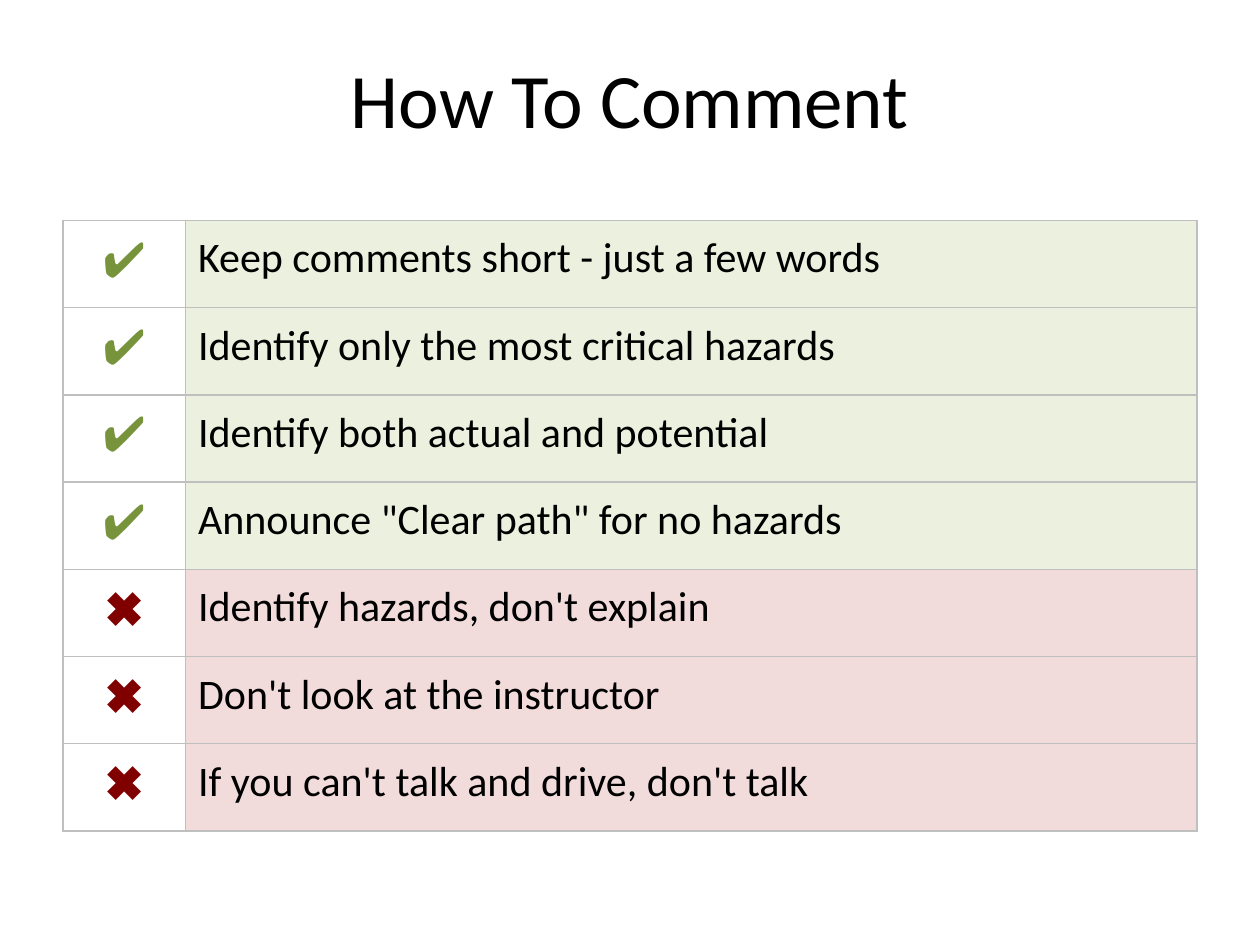
from lxml import etree
from pptx import Presentation
from pptx.dml.color import RGBColor
from pptx.enum.text import MSO_ANCHOR, PP_ALIGN
from pptx.oxml.ns import qn
from pptx.util import Pt

CENTER, LEFT = PP_ALIGN.CENTER, PP_ALIGN.LEFT
MIDDLE, TOP = MSO_ANCHOR.MIDDLE, MSO_ANCHOR.TOP
TITLE_ONLY = 5

COLORS = {
    "text": "000000",
    "border": "BFBFBF",
    "do_mark": "77933C",
    "do_fill": "EBF1DE",
    "dont_mark": "800000",
    "dont_fill": "F2DCDB",
}
MARKS = {"do": "✔", "dont": "✖"}
ADVICE = [
    ("do", "Keep comments short - just a few words"),
    ("do", "Identify only the most critical hazards"),
    ("do", "Identify both actual and potential"),
    ("do", 'Announce "Clear path" for no hazards'),
    ("dont", "Identify hazards, don't explain"),
    ("dont", "Don't look at the instructor"),
    ("dont", "If you can't talk and drive, don't talk"),
]
MARK_WIDTH = 70


def color(name):
    return RGBColor.from_string(COLORS[name])


def write(frame, text, size, font, color_name, align):
    paragraph = frame.paragraphs[0]
    paragraph.alignment = align
    run = paragraph.add_run()
    run.text = text
    run.font.size = Pt(size)
    run.font.name = font
    run.font.color.rgb = color(color_name)


def add_borders(cell):
    """Line all four sides; must run before the cell gets its fill."""
    properties = cell._tc.get_or_add_tcPr()
    for side in ("a:lnL", "a:lnR", "a:lnT", "a:lnB"):
        line = etree.SubElement(properties, qn(side), w=str(Pt(1)))
        fill = etree.SubElement(line, qn("a:solidFill"))
        etree.SubElement(fill, qn("a:srgbClr"), val=COLORS["border"])


def format_cell(cell, fill_name=None):
    cell.margin_left = cell.margin_right = Pt(7.2)
    cell.margin_top = cell.margin_bottom = Pt(7.2)
    cell.vertical_anchor = TOP
    add_borders(cell)
    if fill_name:
        cell.fill.solid()
        cell.fill.fore_color.rgb = color(fill_name)
    else:
        cell.fill.background()


def place_title(slide, left, top, width, height):
    title = slide.shapes.title
    title.left, title.top = Pt(left), Pt(top)
    title.width, title.height = Pt(width), Pt(height)
    title.text_frame.vertical_anchor = MIDDLE
    write(title.text_frame, "How To Comment", 44, "Calibri", "text", CENTER)


def add_advice_table(slide, left, top, width, height):
    table = slide.shapes.add_table(
        len(ADVICE), 2, Pt(left), Pt(top), Pt(width), Pt(height)
    ).table
    table.first_row = table.horz_banding = False
    table.columns[0].width = Pt(MARK_WIDTH)
    table.columns[1].width = Pt(width - MARK_WIDTH)
    for row, (kind, advice) in enumerate(ADVICE):
        table.rows[row].height = Pt(height / len(ADVICE))
        mark_cell, advice_cell = table.cell(row, 0), table.cell(row, 1)
        format_cell(mark_cell)
        write(mark_cell.text_frame, MARKS[kind], 28, "Arial", f"{kind}_mark", CENTER)
        format_cell(advice_cell, f"{kind}_fill")
        write(advice_cell.text_frame, advice, 24, "Calibri", "text", LEFT)


def main():
    deck = Presentation()
    deck.slide_width, deck.slide_height = Pt(720), Pt(540)
    slide = deck.slides.add_slide(deck.slide_layouts[TITLE_ONLY])
    place_title(slide, 36, 10.8, 648, 90)
    add_advice_table(slide, 36, 126, 648, 349)
    deck.save("out.pptx")


if __name__ == "__main__":
    main()
